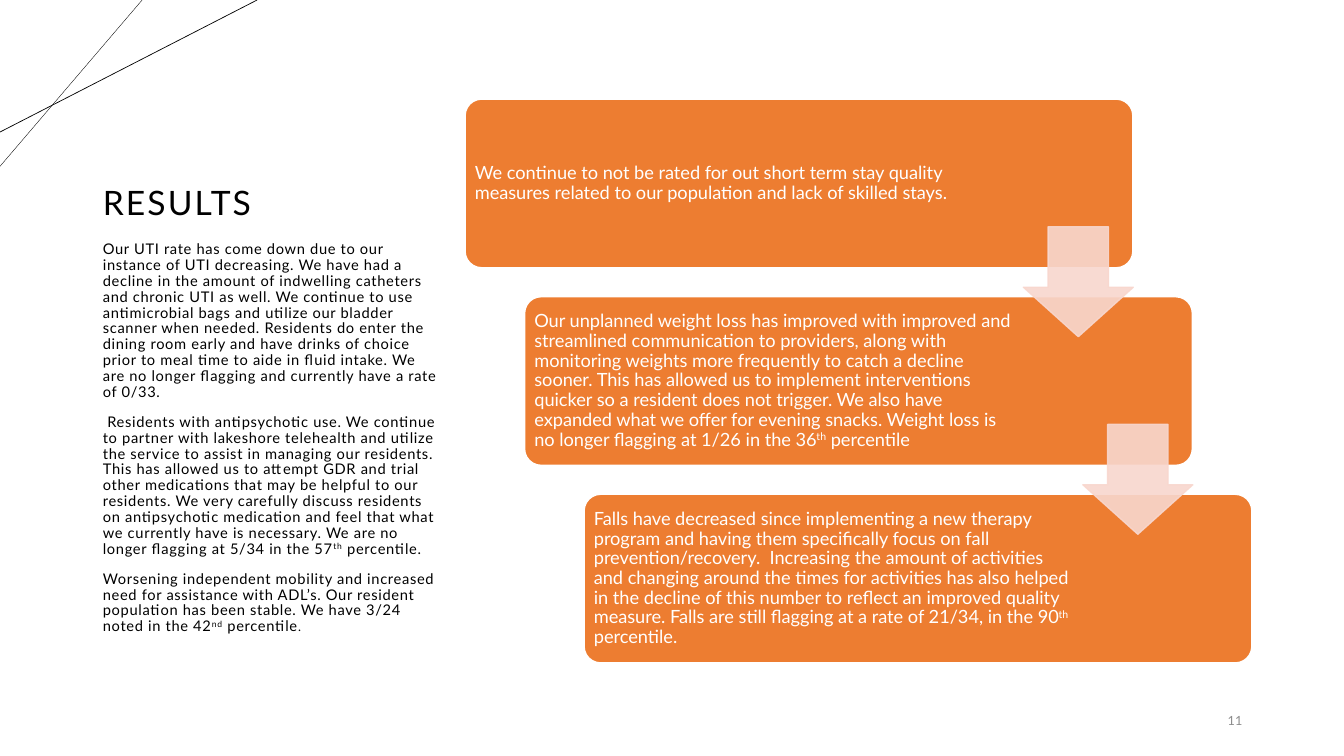
from dataclasses import dataclass

from pptx import Presentation
from pptx.dml.color import RGBColor
from pptx.enum.shapes import MSO_CONNECTOR as Connector, MSO_SHAPE as Shape
from pptx.enum.text import MSO_ANCHOR as Anchor, MSO_AUTO_SIZE as AutoSize, PP_ALIGN as Align
from pptx.oxml.ns import qn
from pptx.oxml.xmlchemy import OxmlElement
from pptx.util import Inches, Pt


@dataclass(frozen=True)
class Theme:
    font: str = "Lato"
    ink: str = "000000"
    paper: str = "FFFFFF"
    card: str = "ED7D31"
    arrow: str = "F8D7CE"
    muted: str = "8C8C8C"
    title_size: float = 24
    body_size: float = 10.5
    card_size: float = 13
    small_size: float = 9


@dataclass(frozen=True)
class Span:
    text: str
    raised: bool = False
    size: float | None = None


@dataclass(frozen=True)
class TextStyle:
    size: float
    color: str
    tracking: float = 0
    before: float = 0
    line_spacing: float = 0.9
    align: Align = Align.LEFT


@dataclass(frozen=True)
class Rule:
    start: tuple[float, float]
    end: tuple[float, float]
    width: float


THEME = Theme()
TITLE = TextStyle(THEME.title_size, THEME.ink, tracking=1.5)
BODY = TextStyle(THEME.body_size, THEME.ink, tracking=0.5, before=10)
CARD = TextStyle(THEME.card_size, THEME.paper)
NUMBER = TextStyle(THEME.small_size, THEME.muted, line_spacing=1, align=Align.RIGHT)

RULES = [Rule((1.41, 0), (0, 1.65), 0.25), Rule((2.55, 0), (0, 1.31), 0.5)]
STEP_X, STEP_Y = 0.59, 1.96

BODY_TEXT = [
    [Span("Our UTI rate has come down due to our instance of UTI decreasing. We have had a decline in the "
          "amount of indwelling catheters and chronic UTI as well. We continue to use antimicrobial bags and "
          "utilize our bladder scanner when needed. Residents do enter the dining room early and have drinks "
          "of choice prior to meal time to aide in fluid intake. We are no longer flagging and currently have "
          "a rate of 0/33.")],
    [Span(" Residents with antipsychotic use. We continue to partner with lakeshore telehealth and utilize the "
          "service to assist in managing our residents. This has allowed us to attempt GDR and trial other "
          "medications that may be helpful to our residents. We very carefully discuss residents on "
          "antipsychotic medication and feel that what we currently have is necessary. We are no longer "
          "flagging at 5/34 in the 57"), Span("th", raised=True), Span(" percentile.")],
    [Span("Worsening independent mobility and increased need for assistance with ADL’s. Our resident population "
          "has been stable. We have 3/24 noted in the 42"), Span("nd", raised=True), Span(" percentile"),
     Span(".", size=THEME.small_size)],
]
CARD_TEXTS = [
    [Span("We continue to not be rated for out short term stay quality measures related to our population and "
          "lack of skilled stays.")],
    [Span("Our unplanned weight loss has improved with improved and streamlined communication to providers, "
          "along with monitoring weights more frequently to catch a decline sooner. This has allowed us to "
          "implement interventions quicker so a resident does not trigger. We also have expanded what we offer "
          "for evening snacks. Weight loss is no longer flagging at 1/26 in the 36"),
     Span("th", raised=True), Span(" percentile")],
    [Span("Falls have decreased since implementing a new therapy program and having them specifically focus on "
          "fall prevention/recovery.  Increasing the amount of activities and changing around the times for "
          "activities has also helped in the decline of this number to reflect an improved quality measure. "
          "Falls are still flagging at a rate of 21/34, in the 90"),
     Span("th", raised=True), Span(" percentile.")],
]


def place(box, left: float, top: float, width: float, height: float) -> None:
    box.left, box.top = Inches(left), Inches(top)
    box.width, box.height = Inches(width), Inches(height)


def write(box, paragraphs: list[list[Span]], style: TextStyle, anchor: Anchor,
          insets: tuple[float, float, float, float] = (0.1, 0.05, 0.1, 0.05)) -> None:
    """Fill a box with styled paragraphs; insets run left, top, right, bottom."""
    frame = box.text_frame
    frame.word_wrap, frame.auto_size, frame.vertical_anchor = True, AutoSize.NONE, anchor
    (frame.margin_left, frame.margin_top,
     frame.margin_right, frame.margin_bottom) = map(Inches, insets)
    for index, spans in enumerate(paragraphs):
        para = frame.add_paragraph() if index else frame.paragraphs[0]
        para.alignment, para.line_spacing = style.align, style.line_spacing
        para.space_before, para.space_after = Pt(style.before), Pt(0)
        para.font.name, para.font.size, para.font.bold = THEME.font, Pt(style.size), False
        para.font.color.rgb = RGBColor.from_string(style.color)
        for span in spans:
            run = para.add_run()
            run.text = span.text
            if span.size:
                run.font.size = Pt(span.size)
            properties = run._r.get_or_add_rPr()
            if style.tracking:
                properties.set("spc", str(int(style.tracking * 100)))
            if span.raised:
                properties.set("baseline", "30000")


def add_text(page, area: tuple[float, float, float, float], spans: list[Span], style: TextStyle,
             insets: tuple[float, float, float, float] = (0.1, 0.05, 0.1, 0.05)) -> None:
    box = page.shapes.add_textbox(*map(Inches, area))
    write(box, [spans], style, Anchor.MIDDLE, insets)


def add_block(page, kind: Shape, area: tuple[float, float, float, float], adjustments: list[float],
              fill: str, line: str, line_width: float, opacity: int = 100) -> None:
    block = page.shapes.add_shape(kind, *map(Inches, area))
    block.shadow.inherit = False
    for index, value in enumerate(adjustments):
        block.adjustments[index] = value
    block.fill.solid()
    block.fill.fore_color.rgb = RGBColor.from_string(fill)
    block.line.color.rgb = RGBColor.from_string(line)
    block.line.width = Pt(line_width)
    if opacity < 100:
        for color in block._element.spPr.iter(qn("a:srgbClr")):
            alpha = OxmlElement("a:alpha")
            alpha.set("val", str(opacity * 1000))
            color.append(alpha)


def add_rule(page, rule: Rule) -> None:
    line = page.shapes.add_connector(Connector.STRAIGHT, *map(Inches, rule.start + rule.end))
    line.line.color.rgb = RGBColor.from_string(THEME.ink)
    line.line.width = Pt(rule.width)
    line._element.spPr.append(OxmlElement("a:effectLst"))


def main() -> None:
    deck = Presentation()
    deck.slide_width, deck.slide_height = Inches(13.33), Inches(7.5)
    page = deck.slides.add_slide(deck.slide_layouts.get_by_name("Section Header"))

    # Corner lines
    for rule in RULES:
        add_rule(page, rule)

    # Title and findings
    title, body = page.shapes.title, page.placeholders[1]
    place(title, 0.92, 0.98, 3.55, 2.1)
    write(title, [[Span("RESULTS")]], TITLE, Anchor.MIDDLE)
    place(body, 0.92, 2.4, 3.55, 4.22)
    write(body, BODY_TEXT, BODY, Anchor.TOP, (0.1, 0, 0.1, 0.05))

    # Page number
    add_text(page, (11.34, 6.95, 1.08, 0.4), [Span("11")], NUMBER)

    # Staircase of cards
    for step, spans in enumerate(CARD_TEXTS):
        left, top = 4.61 + step * STEP_X, 0.98 + step * STEP_Y
        add_block(page, Shape.ROUNDED_RECTANGLE, (left, top, 6.63, 1.68), [0.1],
                  THEME.card, THEME.paper, 1.5)
        add_text(page, (left + 0.05, top + 0.05, 4.86, 1.58), spans, CARD, (0.05,) * 4)

    # Arrows between neighbouring cards
    for step in range(len(CARD_TEXTS) - 1):
        add_block(page, Shape.DOWN_ARROW, (10.15 + step * STEP_X, 2.25 + step * STEP_Y, 1.09, 1.09),
                  [0.55, 0.45], THEME.arrow, THEME.arrow, 1, opacity=90)

    deck.save("out.pptx")


if __name__ == "__main__":
    main()
